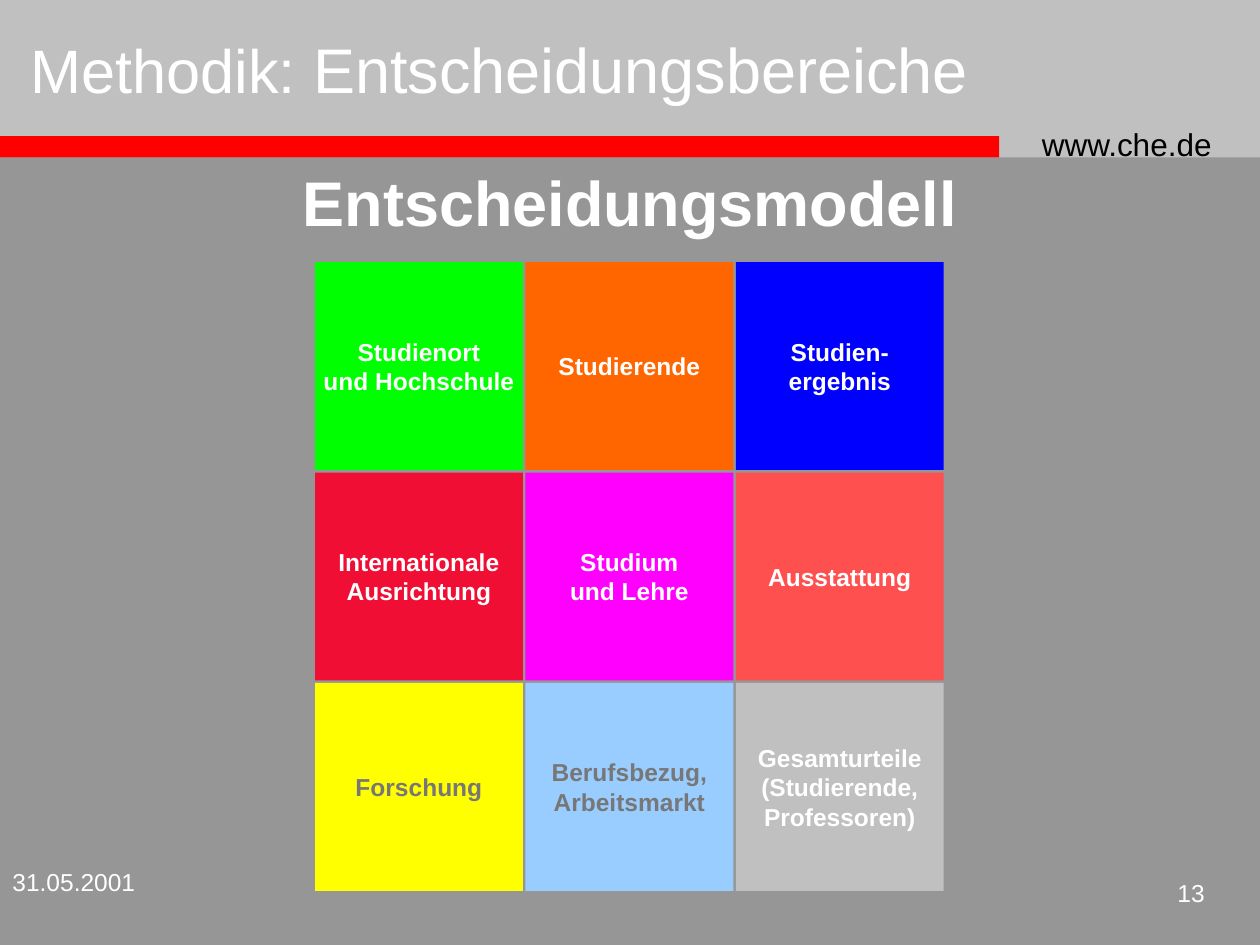
"""Build the slide showing the nine decision areas of the decision model."""
from dataclasses import dataclass

from pptx import Presentation
from pptx.dml.color import RGBColor
from pptx.enum.shapes import MSO_SHAPE as Shape
from pptx.enum.text import MSO_ANCHOR as Anchor, MSO_AUTO_SIZE as AutoSize, PP_ALIGN as Align
from pptx.util import Inches, Pt


@dataclass(frozen=True)
class Theme:
    font: str = "Arial"
    background: str = "969696"
    silver: str = "C0C0C0"
    red: str = "FF0000"
    white: str = "FFFFFF"
    black: str = "000000"
    gray: str = "777777"
    heading: int = 36
    lead: int = 35
    address: int = 18
    small: int = 14


THEME = Theme()

TITLE = [("Methodik: ", THEME.lead), ("Entscheidungsbereiche", THEME.heading)]
BANDS = [
    ((0, 0, 10, 1.25), THEME.silver),
    ((0, 1.08, 7.93, 0.17), THEME.red),
]
LABELS = [
    ("www.che.de", (8.17, 0.94, 1.75, 0.4), THEME.address, THEME.black, Align.LEFT, False),
    ("31.05.2001", (0, 6.83, 2.08, 0.5), THEME.small, THEME.white, Align.LEFT, False),
    ("13", (9.08, 6.92, 0.58, 0.42), THEME.small, THEME.white, Align.RIGHT, False),
    ("Entscheidungsmodell", (0, 1.25, 10, 0.7), THEME.heading, THEME.white, Align.CENTER, True),
]
AREAS = [
    [
        ("Studienort\nund Hochschule", "00FF00", THEME.white),
        ("Studierende", "FF6600", THEME.white),
        ("Studien-\nergebnis", "0000FF", THEME.white),
    ],
    [
        ("Internationale\nAusrichtung", "F00E34", THEME.white),
        ("Studium\nund Lehre", "FF00FF", THEME.white),
        ("Ausstattung", "FF5050", THEME.white),
    ],
    [
        ("Forschung", "FFFF00", THEME.gray),
        ("Berufsbezug,\nArbeitsmarkt", "99CCFF", THEME.gray),
        ("Gesamturteile\n(Studierende,\nProfessoren)", THEME.silver, THEME.white),
    ],
]
GRID_LEFT, GRID_TOP = 2.5, 2.08
TILE, PITCH = 1.65, 1.67


def style(font, size, color, bold=False):
    font.name = THEME.font
    font.size = Pt(size)
    font.bold = bold
    font.color.rgb = RGBColor.from_string(color)


def write(frame, text, size, color, align, bold):
    frame.text = text
    for paragraph in frame.paragraphs:
        paragraph.alignment = align
        style(paragraph.font, size, color, bold)


def add_rectangle(slide, box, fill):
    shape = slide.shapes.add_shape(Shape.RECTANGLE, *map(Inches, box))
    shape.shadow.inherit = False
    shape.fill.solid()
    shape.fill.fore_color.rgb = RGBColor.from_string(fill)
    shape.line.fill.background()
    return shape


def add_label(slide, text, box, size, color, align, bold):
    frame = slide.shapes.add_textbox(*map(Inches, box)).text_frame
    frame.word_wrap = True
    write(frame, text, size, color, align, bold)


def add_tile(slide, row, column, text, fill, color):
    box = (GRID_LEFT + column * PITCH, GRID_TOP + row * PITCH, TILE, TILE)
    frame = add_rectangle(slide, box, fill).text_frame
    frame.word_wrap = False
    frame.vertical_anchor = Anchor.MIDDLE
    write(frame, text, THEME.small, color, Align.CENTER, True)


def fill_title(title):
    title.left, title.top, title.width, title.height = map(Inches, (0, 0, 8.25, 1.08))
    frame = title.text_frame
    frame.auto_size = AutoSize.NONE
    frame.vertical_anchor = Anchor.MIDDLE
    frame.margin_left = Inches(0.24)
    paragraph = frame.paragraphs[0]
    paragraph.alignment = Align.LEFT
    for text, size in TITLE:
        run = paragraph.add_run()
        run.text = text
        style(run.font, size, THEME.white)


def main():
    presentation = Presentation()
    presentation.slide_width, presentation.slide_height = Inches(10), Inches(7.5)
    slide = presentation.slides.add_slide(presentation.slide_layouts[5])
    slide.background.fill.solid()
    slide.background.fill.fore_color.rgb = RGBColor.from_string(THEME.background)

    title = slide.shapes.title
    for box, fill in BANDS:
        band = add_rectangle(slide, box, fill)
        title._element.addprevious(band._element)
    fill_title(title)
    for label in LABELS:
        add_label(slide, *label)
    for row, areas in enumerate(AREAS):
        for column, area in enumerate(areas):
            add_tile(slide, row, column, *area)

    presentation.save("out.pptx")


if __name__ == "__main__":
    main()
